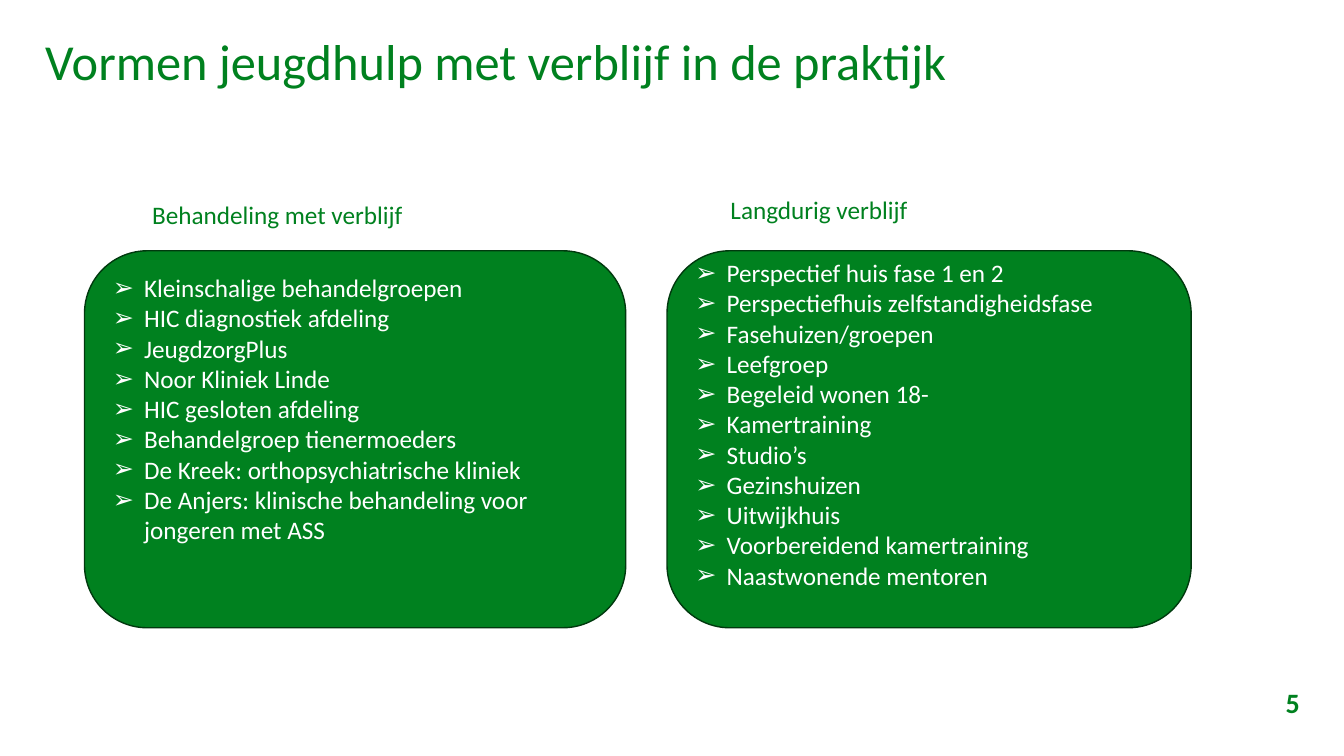
import pptx
import pptx.dml.color
import pptx.enum.shapes
import pptx.enum.text
import pptx.oxml
import pptx.oxml.ns
import pptx.util

Cm = pptx.util.Cm
Pt = pptx.util.Pt
RGBColor = pptx.dml.color.RGBColor
Align = pptx.enum.text.PP_ALIGN
Anchor = pptx.enum.text.MSO_ANCHOR

GREEN = RGBColor(0x00, 0x81, 0x1F)
DARK_GREEN = RGBColor(0x00, 0x39, 0x0E)
WHITE = RGBColor(0xFF, 0xFF, 0xFF)
NAMESPACE = pptx.oxml.ns.nsdecls("a")
NO_MARGINS = dict.fromkeys(("margin_left", "margin_top", "margin_right", "margin_bottom"), 0)

TREATMENT = [
    "Kleinschalige behandelgroepen",
    "HIC diagnostiek afdeling",
    "JeugdzorgPlus",
    "Noor Kliniek Linde",
    "HIC gesloten afdeling",
    "Behandelgroep tienermoeders",
    "De Kreek: orthopsychiatrische kliniek",
    "De Anjers: klinische behandeling voor jongeren met ASS",
]
LONG_STAY = [
    "Perspectief huis fase 1 en 2",
    "Perspectiefhuis zelfstandigheidsfase",
    "Fasehuizen/groepen",
    "Leefgroep",
    "Begeleid wonen 18-",
    "Kamertraining",
    "Studio’s",
    "Gezinshuizen",
    "Uitwijkhuis",
    "Voorbereidend kamertraining",
    "Naastwonende mentoren",
]


def set_values(target, values):
    for name, value in values.items():
        setattr(target, name, value)


class CarePage:
    font = "Calibri"
    body_size = 18
    line_height = 0.77
    indent = Cm(0.79)

    def __init__(self, deck):
        self.page = deck.slides.add_slide(deck.slide_layouts[5])

    def add_span(self, para, text, color=GREEN, size=body_size, bold=False):
        span = para.add_run()
        span.text = text
        set_values(span.font, {"name": self.font, "size": Pt(size), "bold": bold})
        span.font.color.rgb = color

    def title(self, text, left, top, width, height):
        box = self.page.shapes.title
        set_values(box, {"left": Cm(left), "top": Cm(top), "width": Cm(width), "height": Cm(height)})
        set_values(box.text_frame, {**NO_MARGINS, "word_wrap": True, "vertical_anchor": Anchor.TOP})
        para = box.text_frame.paragraphs[0]
        set_values(para, {"alignment": Align.LEFT, "line_spacing": 0.92})
        self.add_span(para, text, size=36)

    def label(self, text, left, top, width, height, frame=None, align=Align.LEFT, **style):
        box = self.page.shapes.add_textbox(Cm(left), Cm(top), Cm(width), Cm(height))
        set_values(box.text_frame, {"word_wrap": True, **(frame or {})})
        para = box.text_frame.paragraphs[0]
        para.alignment = align
        self.add_span(para, text, **style)

    def heading_table(self, text, left, top, widths, height):
        holder = self.page.shapes.add_table(
            1, len(widths), Cm(left), Cm(top), Cm(sum(widths)), Cm(height))
        table = holder.table
        for column, width in zip(table.columns, widths):
            column.width = Cm(width)
        for cell in table.rows[0].cells:
            for side, points in {"L": 1, "R": 1, "T": 1, "B": 3}.items():
                cell._tc.get_or_add_tcPr().append(pptx.oxml.parse_xml(
                    f'<a:ln{side} {NAMESPACE} w="{Pt(points)}"><a:solidFill>'
                    f'<a:srgbClr val="{WHITE}"/></a:solidFill></a:ln{side}>'))
            cell.fill.solid()
            cell.fill.fore_color.rgb = WHITE
        self.add_span(table.cell(0, 0).text_frame.paragraphs[0], text)

    def bullet_panel(self, items, left, top, width, height, spare_lines):
        panel = self.page.shapes.add_shape(
            pptx.enum.shapes.MSO_SHAPE.ROUNDED_RECTANGLE,
            Cm(left), Cm(top), Cm(width), Cm(height))
        panel.shadow.inherit = False
        panel.fill.solid()
        panel.fill.fore_color.rgb = GREEN
        panel.line.color.rgb = DARK_GREEN
        panel.line.width = Pt(1)
        frame = panel.text_frame
        set_values(frame, {
            "word_wrap": True,
            "vertical_anchor": Anchor.MIDDLE,
            "margin_bottom": Cm(0.13 + spare_lines * self.line_height),
        })
        for index, item in enumerate(items):
            para = frame.add_paragraph() if index else frame.paragraphs[0]
            para.alignment = Align.LEFT
            properties = para._p.get_or_add_pPr()
            properties.set("marL", str(int(self.indent)))
            properties.set("indent", str(-int(self.indent)))
            for bullet in ('buFont {} typeface="Arial"', 'buChar {} char="➢"'):
                properties.append(pptx.oxml.parse_xml(f"<a:{bullet.format(NAMESPACE)}/>"))
            self.add_span(para, item, WHITE)


def main():
    deck = pptx.Presentation()
    set_values(deck, {"slide_width": Cm(33.87), "slide_height": Cm(19.05)})
    care = CarePage(deck)
    care.label("5", 31.06, 17.27, 1.7, 0.86,
               frame={**NO_MARGINS, "vertical_anchor": Anchor.MIDDLE},
               align=Align.RIGHT, size=20, bold=True)
    care.title("Vormen jeugdhulp met verblijf in de praktijk", 1.14, 0.91, 31.6, 1.42)
    care.heading_table("Behandeling met verblijf", 3.58, 4.93, (7.49, 4.72), 1.19)
    care.bullet_panel(TREATMENT, 2.13, 6.32, 13.64, 9.5, spare_lines=2)
    care.bullet_panel(LONG_STAY, 16.81, 6.32, 13.21, 9.5, spare_lines=1)
    care.label("Langdurig verblijf", 18.16, 4.78, 10.8, 1.02)
    deck.save("out.pptx")


if __name__ == "__main__":
    main()
